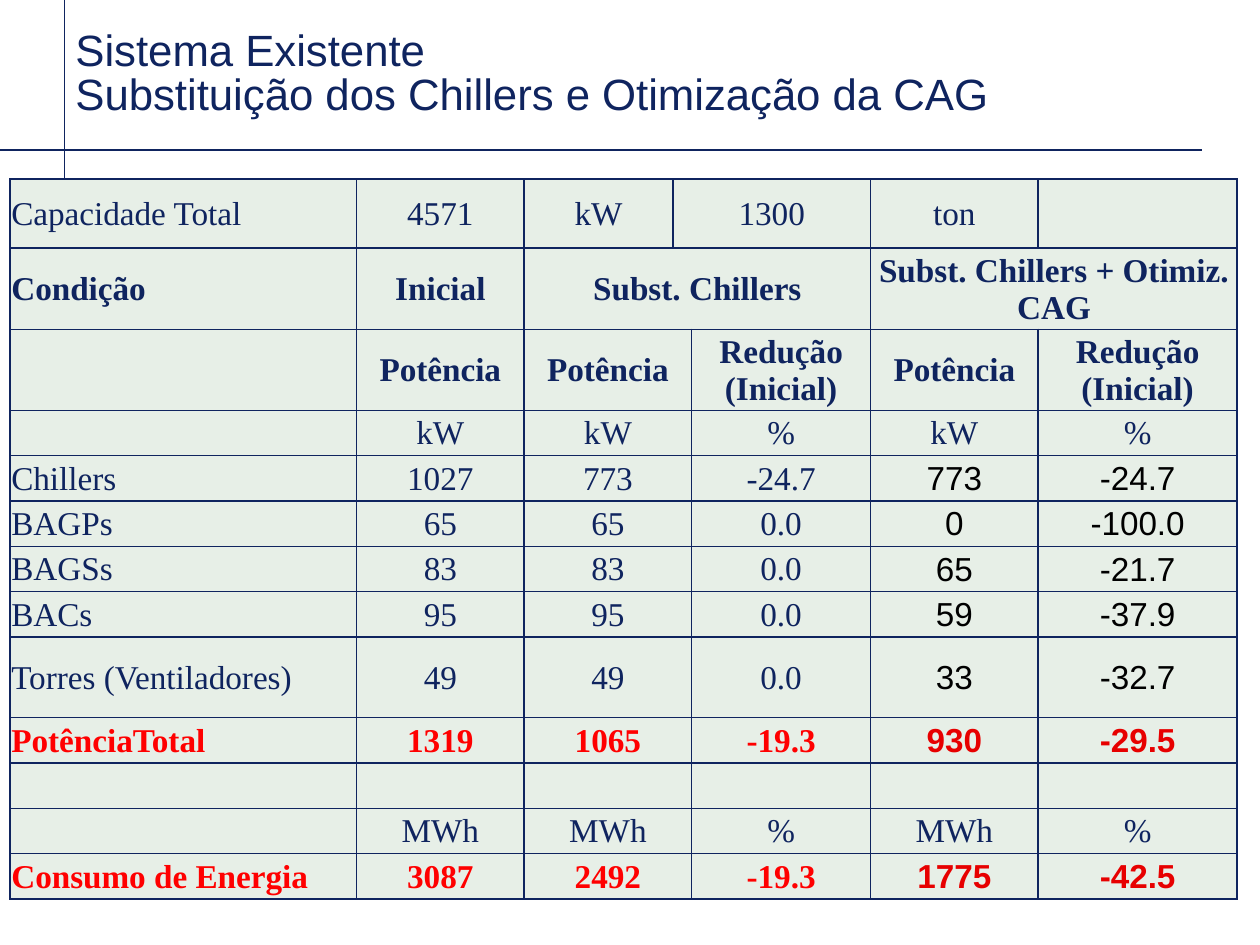
from lxml.etree import SubElement
from pptx import Presentation
from pptx.dml.color import RGBColor
from pptx.enum.shapes import MSO_CONNECTOR
from pptx.enum.text import MSO_ANCHOR as ANCHOR, PP_ALIGN as ALIGN
from pptx.oxml.ns import qn
from pptx.util import Inches, Pt

NAVY = RGBColor(0x0F, 0x24, 0x5F)
BLACK = RGBColor(0, 0, 0)
RED = RGBColor(0xFF, 0, 0)
DARK_RED = RGBColor(0xE7, 0, 0)
PALE_GREEN = RGBColor(0xE7, 0xEF, 0xE7)
SANS, SERIF = "Arial", "Times New Roman"

COL_WIDTHS = [2.75, 1.33, 1.18, 0.15, 1.42, 1.33, 1.58]
ROW_HEIGHTS = [0.55, 0.64, 0.59] + [0.36] * 5 + [0.64] + [0.36] * 4
HEADER_ROWS = (1, 2)
TOTAL_ROWS = (9, 12)
VALUE_ROWS = (4, 5, 6, 7, 8) + TOTAL_ROWS
OPTIMIZED_COL = 5

# None continues the cell on its left.
ROWS = [
    ("Capacidade Total", "4571", "kW", "1300", None, "ton", ""),
    ("Condição", "Inicial", "Subst. Chillers", None, None,
     "Subst. Chillers + Otimiz. CAG", None),
    ("", "Potência", "Potência", None, "Redução (Inicial)", "Potência", "Redução (Inicial)"),
    ("", "kW", "kW", None, "%", "kW", "%"),
    ("Chillers", "1027", "773", None, "-24.7", "773", "-24.7"),
    ("BAGPs", "65", "65", None, "0.0", "0", "-100.0"),
    ("BAGSs", "83", "83", None, "0.0", "65", "-21.7"),
    ("BACs", "95", "95", None, "0.0", "59", "-37.9"),
    ("Torres (Ventiladores)", "49", "49", None, "0.0", "33", "-32.7"),
    ("PotênciaTotal", "1319", "1065", None, "-19.3", "930", "-29.5"),
    ("", "", "", None, "", "", ""),
    ("", "MWh", "MWh", None, "%", "MWh", "%"),
    ("Consumo de Energia", "3087", "2492", None, "-19.3", "1775", "-42.5"),
]


def write(tf, text, size=19, font=SERIF, color=NAVY, bold=False,
          align=ALIGN.LEFT, spacing=None):
    """Fill the first paragraph, turning newlines into line breaks."""
    p = tf.paragraphs[0]
    p.alignment = align
    p.line_spacing = spacing
    for i, line in enumerate(text.split("\n")):
        if i:
            p.add_line_break()
        r = p.add_run()
        r.text = line
        r.font.size, r.font.name, r.font.bold = Pt(size), font, bold
        r.font.color.rgb = color


def cell_format(row, col):
    """Return the text format that a table position calls for."""
    total = row in TOTAL_ROWS
    optimized = row in VALUE_ROWS and col >= OPTIMIZED_COL
    if optimized:
        color = DARK_RED if total else BLACK
    else:
        color = RED if total else NAVY
    return dict(font=SANS if optimized else SERIF, color=color,
                bold=total or row in HEADER_ROWS,
                align=ALIGN.CENTER if col else ALIGN.LEFT)


class SlideBuilder:
    def __init__(self, slide, line_color=NAVY, cell_fill=PALE_GREEN):
        self.s = slide
        self.line_color = line_color
        self.cell_fill = cell_fill

    def line(self, x1, y1, x2, y2):
        c = self.s.shapes.add_connector(
            MSO_CONNECTOR.STRAIGHT, Inches(x1), Inches(y1), Inches(x2), Inches(y2))
        c.line.color.rgb = self.line_color
        c.line.width = Pt(0.75)
        SubElement(c._element.spPr, qn("a:effectLst"))

    def title(self, text, x, y, w, h):
        tf = self.s.shapes.add_textbox(Inches(x), Inches(y), Inches(w), Inches(h)).text_frame
        tf.word_wrap = True
        tf.vertical_anchor = ANCHOR.BOTTOM
        write(tf, text, size=25, font=SANS, spacing=0.85)

    def style_cell(self, cell):
        cell.margin_left = cell.margin_right = cell.margin_top = Inches(0.01)
        cell.margin_bottom = 0
        cell.vertical_anchor = ANCHOR.MIDDLE
        tc_pr = cell._tc.get_or_add_tcPr()
        for side in ("lnL", "lnR", "lnT", "lnB"):
            ln = SubElement(tc_pr, qn(f"a:{side}"), w=str(Pt(1)))
            fill = SubElement(ln, qn("a:solidFill"))
            SubElement(fill, qn("a:srgbClr"), val=str(self.line_color))
        cell.fill.solid()
        cell.fill.fore_color.rgb = self.cell_fill

    def table(self, rows, x, y, widths, heights):
        t = self.s.shapes.add_table(
            len(rows), len(widths), Inches(x), Inches(y),
            Inches(sum(widths)), Inches(sum(heights))).table
        t.first_row = t.horz_banding = False
        for column, width in zip(t.columns, widths):
            column.width = Inches(width)
        for table_row, height in zip(t.rows, heights):
            table_row.height = Inches(height)
        for i, row in enumerate(rows):
            for j, text in enumerate(row):
                cell = t.cell(i, j)
                self.style_cell(cell)
                if text:
                    write(cell.text_frame, text, **cell_format(i, j))
                if text is not None:
                    end = j
                    while end + 1 < len(row) and row[end + 1] is None:
                        end += 1
                    if end > j:
                        cell.merge(t.cell(i, end))


def main():
    prs = Presentation()
    prs.slide_width, prs.slide_height = Inches(10), Inches(7.5)
    b = SlideBuilder(prs.slides.add_slide(prs.slide_layouts[6]))
    b.line(0.51, 6.62, 0.51, 0)
    b.line(0, 1.19, 9.54, 1.19)
    b.title("Sistema Existente \nSubstituição dos Chillers e Otimização da CAG",
            0.5, 0.25, 7.58, 0.75)
    b.table(ROWS, 0.08, 1.42, COL_WIDTHS, ROW_HEIGHTS)
    prs.save("out.pptx")


if __name__ == "__main__":
    main()
